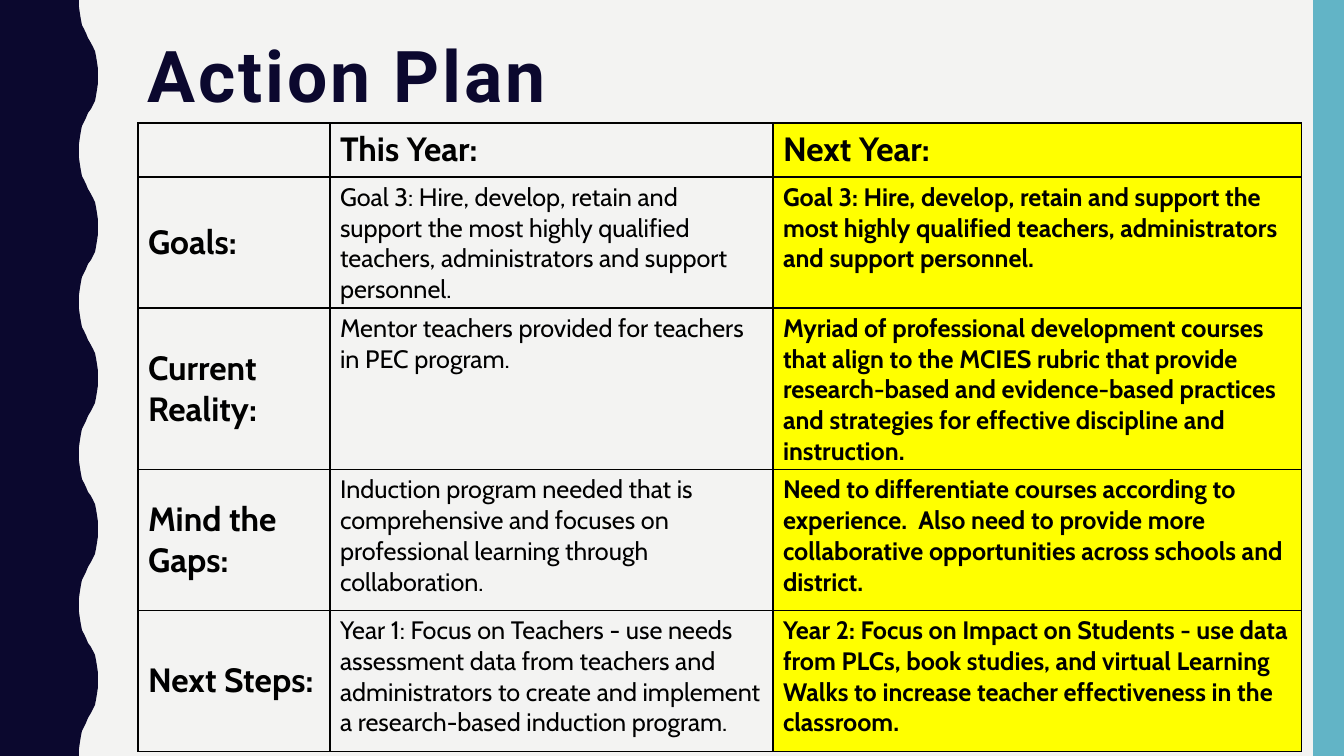
from lxml.etree import SubElement
from pptx import Presentation
from pptx.dml.color import RGBColor
from pptx.enum.shapes import MSO_SHAPE
from pptx.enum.text import MSO_ANCHOR
from pptx.oxml.ns import qn
from pptx.util import Pt

PX = 12192000 / 1344  # EMU per px
WIDTH, HEIGHT = 1344, 756
NAVY = RGBColor(0x0B, 0x08, 0x2E)
TEAL = RGBColor(0x62, 0xB4, 0xC6)
PALE = RGBColor(0xF3, 0xF3, 0xF2)
YELLOW = RGBColor(0xFF, 0xFF, 0x00)
BLACK = RGBColor(0x00, 0x00, 0x00)

TITLE_FORMAT = {"name": "Roboto", "size": Pt(51), "bold": True}
HEADING_FORMAT = {"name": "Cabin", "size": Pt(24), "bold": True}
THIS_YEAR_FORMAT = {"name": "Cabin", "size": Pt(18), "bold": False}
NEXT_YEAR_FORMAT = {"name": "Cabin", "size": Pt(18), "bold": True}

GOAL = ("Goal 3: Hire, develop, retain and support the most highly qualified "
        "teachers, administrators and support personnel.")
PLAN = [
    ("", "This Year:", "Next Year:"),
    ("Goals:", GOAL, GOAL),
    ("Current Reality:",
     "Mentor teachers provided for teachers in PEC program.",
     "Myriad of professional development courses that align to the MCIES rubric "
     "that provide research-based and evidence-based practices and strategies "
     "for effective discipline and instruction."),
    ("Mind the Gaps:",
     "Induction program needed that is comprehensive and focuses on professional "
     "learning through collaboration.",
     "Need to differentiate courses according to experience.  Also need to provide "
     "more collaborative opportunities across schools and district."),
    ("Next Steps:",
     "Year 1: Focus on Teachers - use needs assessment data from teachers and "
     "administrators to create and implement a research-based induction program.",
     "Year 2: Focus on Impact on Students - use data from PLCs, book studies, and "
     "virtual Learning Walks to increase teacher effectiveness in the classroom."),
]
COLUMN_WIDTHS = [192, 443, 529]
ROW_HEIGHTS = [54, 112, 141, 141, 141]


def px(*lengths):
    return [round(length * PX) for length in lengths]


def write(paragraph, text, font_format, color):
    run = paragraph.add_run()
    run.text = text
    for name, value in font_format.items():
        setattr(run.font, name, value)
    run.font.color.rgb = color
    return run


presentation = Presentation()
presentation.slide_width, presentation.slide_height = px(WIDTH, HEIGHT)
slide = presentation.slides.add_slide(presentation.slide_layouts[6])
slide.background.fill.solid()
slide.background.fill.fore_color.rgb = PALE

# Wavy left edge: a quarter wave, mirrored to a whole one and repeated
WAVES = 5
wave_height = HEIGHT / WAVES
quarter = [(79, 0), (79, 7), (80, 14), (81, 20), (82, 25), (84, 29), (86, 33), (88, 38)]
half = quarter + [(177 - x, wave_height / 2 - y) for x, y in quarter[-2::-1]]
wave = half + [(x, wave_height - y) for x, y in half[-2::-1]]
edge = [(x, y + i * wave_height) for i in range(WAVES) for x, y in wave]
builder = slide.shapes.build_freeform(0, 0, scale=PX)
builder.add_line_segments(edge + [(0, HEIGHT)], close=True)
wavy_band = builder.convert_to_shape()

# Right bar
right_bar = slide.shapes.add_shape(MSO_SHAPE.RECTANGLE, *px(1313, 0, 31, HEIGHT))

for shape, color in ((wavy_band, NAVY), (right_bar, TEAL)):
    shape.shadow.inherit = False
    shape.fill.solid()
    shape.fill.fore_color.rgb = color
    shape.line.fill.background()

# Title
title = slide.shapes.add_textbox(*px(138, 36, 1122, 164))
title.text_frame.word_wrap = True
title_paragraph = title.text_frame.paragraphs[0]
title_paragraph.line_spacing = 0.9
title_run = write(title_paragraph, "Action Plan", TITLE_FORMAT, NAVY)
title_run.font._element.set("spc", "200")

# Action plan table
table = slide.shapes.add_table(
    len(PLAN), len(COLUMN_WIDTHS),
    *px(138, 123, sum(COLUMN_WIDTHS), sum(ROW_HEIGHTS))).table
table.first_row = table.horz_banding = False
for column, width in zip(table.columns, px(*COLUMN_WIDTHS)):
    column.width = width
for row, height in zip(table.rows, px(*ROW_HEIGHTS)):
    row.height = height

for r, texts in enumerate(PLAN):
    for c, text in enumerate(texts):
        cell = table.cell(r, c)
        is_heading = r == 0 or c == 0
        cell.vertical_anchor = MSO_ANCHOR.MIDDLE if is_heading else MSO_ANCHOR.TOP

        # Borders
        properties = cell._tc.get_or_add_tcPr()
        for side in ("lnL", "lnR", "lnT", "lnB"):
            border = SubElement(properties, qn(f"a:{side}"), w=str(Pt(1)))
            border_fill = SubElement(border, qn("a:solidFill"))
            SubElement(border_fill, qn("a:srgbClr"), val=str(BLACK))

        # Fill and text
        if c == 2:
            cell.fill.solid()
            cell.fill.fore_color.rgb = YELLOW
        else:
            cell.fill.background()
        body_format = NEXT_YEAR_FORMAT if c == 2 else THIS_YEAR_FORMAT
        if text:
            write(cell.text_frame.paragraphs[0], text,
                  HEADING_FORMAT if is_heading else body_format, BLACK)

presentation.save("out.pptx")
